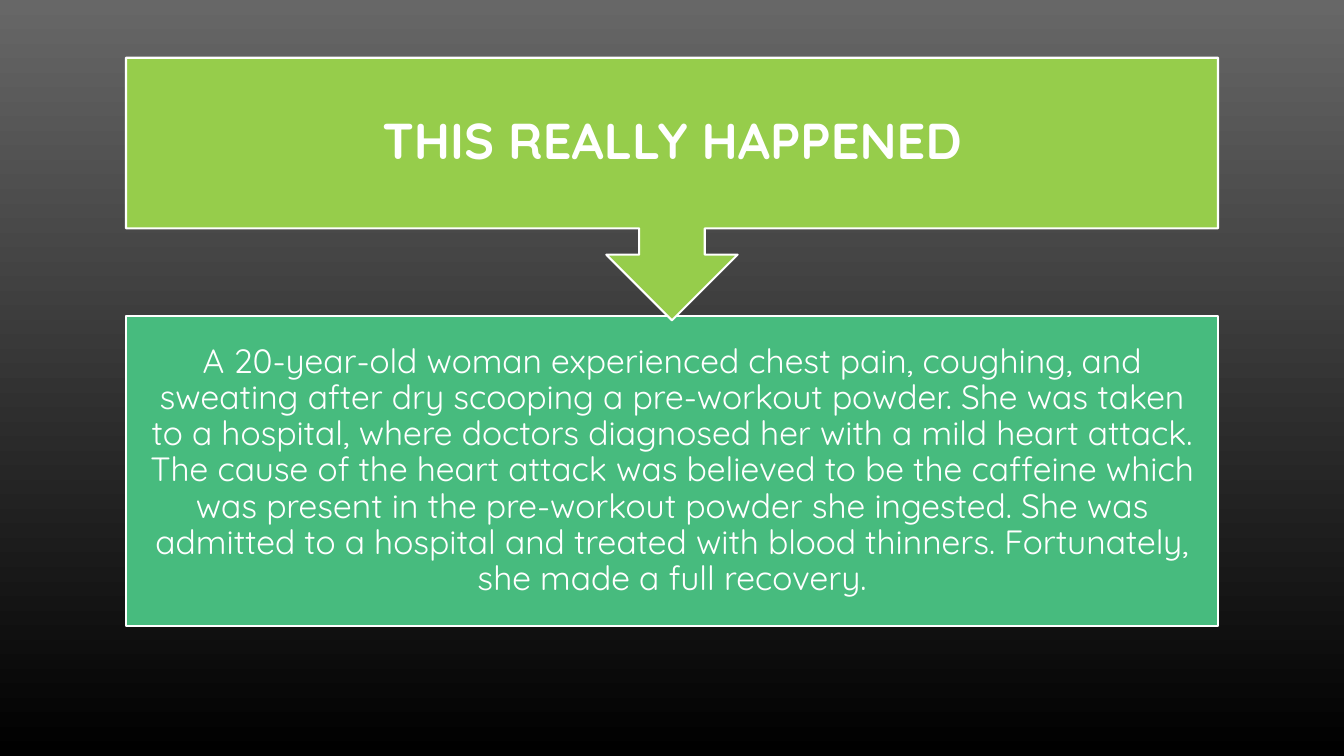
from dataclasses import dataclass

from pptx import Presentation
from pptx.dml.color import RGBColor
from pptx.enum.shapes import MSO_SHAPE
from pptx.enum.text import MSO_ANCHOR, PP_ALIGN
from pptx.util import Emu, Pt

PX = 9525
SLIDE_WIDTH, SLIDE_HEIGHT = 1280, 720
HEADING = "THIS REALLY HAPPENED"
STORY = (
    "A 20-year-old woman experienced chest pain, coughing, and sweating after dry "
    "scooping a pre-workout powder. She was taken to a hospital, where doctors "
    "diagnosed her with a mild heart attack. The cause of the heart attack was "
    "believed to be the caffeine which was present in the pre-workout powder she "
    "ingested. She was admitted to a hospital and treated with blood thinners. "
    "Fortunately, she made a full recovery."
)


@dataclass(frozen=True)
class Theme:
    font: str = "Quicksand"
    white: RGBColor = RGBColor(0xFF, 0xFF, 0xFF)
    lime: RGBColor = RGBColor(0x96, 0xCD, 0x4B)
    green: RGBColor = RGBColor(0x47, 0xBB, 0x7E)
    backdrop_top: RGBColor = RGBColor(0x67, 0x67, 0x67)
    backdrop_bottom: RGBColor = RGBColor(0, 0, 0)
    heading_size: int = 36
    story_size: int = 24
    outline: float = 1.5


THEME = Theme()


def paint_backdrop(slide):
    fill = slide.background.fill
    fill.gradient()
    fill.gradient_angle = 270
    shades = (THEME.backdrop_top, THEME.backdrop_bottom)
    for stop, shade in zip(fill.gradient_stops, shades):
        stop.color.rgb = shade


def add_panel(slide, outline, box, color, words, size, inset, bold=False):
    panel = slide.shapes.add_shape(outline, *(Emu(length * PX) for length in box))
    panel.shadow.inherit = False
    panel.fill.solid()
    panel.fill.fore_color.rgb = color
    panel.line.color.rgb = THEME.white
    panel.line.width = Pt(THEME.outline)

    frame = panel.text_frame
    frame.word_wrap = True
    frame.vertical_anchor = MSO_ANCHOR.MIDDLE
    frame.margin_left = frame.margin_right = Emu(inset * PX)
    frame.margin_top = frame.margin_bottom = Emu(inset * PX)
    frame.text = words
    paragraph = frame.paragraphs[0]
    paragraph.alignment = PP_ALIGN.CENTER
    paragraph.line_spacing = 0.9
    font = paragraph.runs[0].font
    font.name = THEME.font
    font.size = Pt(size)
    font.bold = bold
    font.color.rgb = THEME.white


def add_story_flow(slide, left, top, width, height):
    heading_height, story_height = 250, 295
    story_top = top + height - story_height
    add_panel(slide, MSO_SHAPE.RECTANGLE, (left, story_top, width, story_height),
              THEME.green, STORY, THEME.story_size, inset=18)
    add_panel(slide, MSO_SHAPE.DOWN_ARROW_CALLOUT, (left, top, width, heading_height),
              THEME.lime, HEADING, THEME.heading_size, inset=27, bold=True)


def main():
    deck = Presentation()
    deck.slide_width = Emu(SLIDE_WIDTH * PX)
    deck.slide_height = Emu(SLIDE_HEIGHT * PX)
    slide = deck.slides.add_slide(deck.slide_layouts[6])
    paint_backdrop(slide)
    add_story_flow(slide, left=120, top=55, width=1040, height=541)
    deck.save("out.pptx")


if __name__ == "__main__":
    main()
